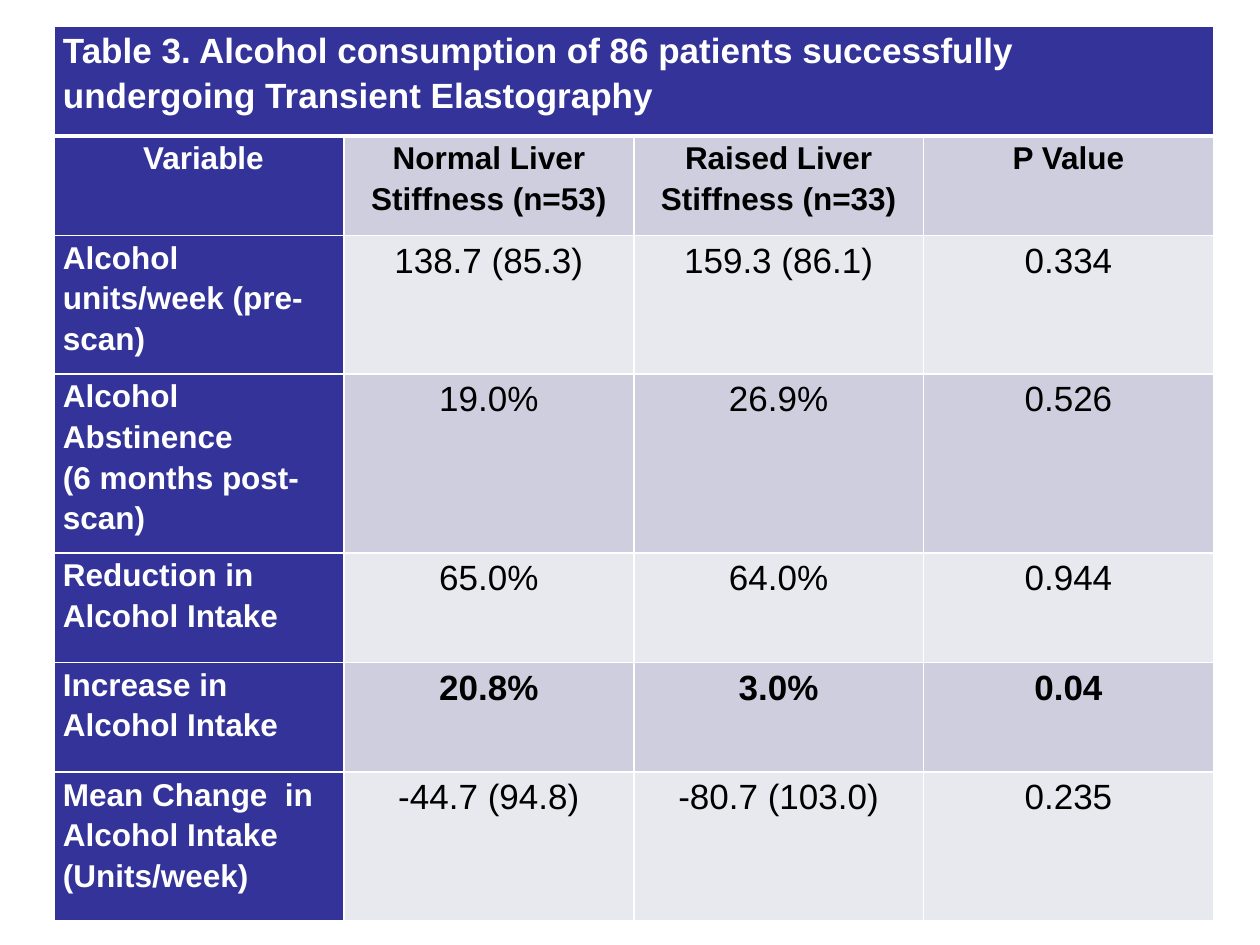
from dataclasses import dataclass

from lxml.etree import SubElement
from pptx import Presentation
from pptx.dml.color import RGBColor
from pptx.enum.text import PP_ALIGN
from pptx.oxml.ns import qn
from pptx.table import Table, _Cell
from pptx.util import Inches, Pt

NAVY, LAVENDER, PALE = "333399", "CECEDE", "E8E8EF"
WHITE, BLACK = "FFFFFF", "000000"
COLUMN_WIDTH = 2.3
TITLE_HEIGHT, HEADER_HEIGHT = 0.87, 0.79
TITLE = "Table 3. Alcohol consumption of 86 patients successfully undergoing Transient Elastography"
HEADERS = [" Variable", "Normal Liver Stiffness (n=53)", "Raised Liver Stiffness (n=33)", "P Value"]


@dataclass
class Measure:
    label: str
    values: tuple[str, str, str]
    height: float
    significant: bool = False


MEASURES = [
    Measure("Alcohol units/week (pre-scan)", ("138.7 (85.3)", "159.3 (86.1)", "0.334"), 1.1),
    Measure("Alcohol Abstinence\n(6 months post-scan)", ("19.0%", "26.9%", "0.526"), 1.42),
    Measure("Reduction in Alcohol Intake", ("65.0%", "64.0%", "0.944"), 0.87),
    Measure("Increase in Alcohol Intake", ("20.8%", "3.0%", "0.04"), 0.87, significant=True),
    Measure("Mean Change  in Alcohol Intake (Units/week)", ("-44.7 (94.8)", "-80.7 (103.0)", "0.235"), 1.18),
]


def color(value: str) -> RGBColor:
    return RGBColor.from_string(value)


def set_borders(cell: _Cell, top: float = 1, bottom: float = 1) -> None:
    """Draw white borders; call before the fill, which must follow them in the XML."""
    properties = cell._tc.get_or_add_tcPr()
    for tag, width in (("a:lnL", 1), ("a:lnR", 1), ("a:lnT", top), ("a:lnB", bottom)):
        line = SubElement(properties, qn(tag), w=str(Pt(width)))
        SubElement(SubElement(line, qn("a:solidFill")), qn("a:srgbClr"), val=WHITE)


def write_cell(cell: _Cell, text: str, *, fill: str, font_color: str = BLACK, size: int = 18,
               bold: bool = True, align: PP_ALIGN = PP_ALIGN.CENTER) -> None:
    cell.margin_left = cell.margin_right = Inches(0.07)
    cell.margin_top = cell.margin_bottom = 0
    cell.fill.solid()
    cell.fill.fore_color.rgb = color(fill)
    cell.text_frame.text = text
    for paragraph in cell.text_frame.paragraphs:
        paragraph.alignment = align
        paragraph.line_spacing = 1.15
        for run in paragraph.runs:
            run.font.name = "Arial"
            run.font.size = Pt(size)
            run.font.bold = bold
            run.font.color.rgb = color(font_color)


def fill_table(table: Table) -> None:
    for column in table.columns:
        column.width = Inches(COLUMN_WIDTH)
    heights = [TITLE_HEIGHT, HEADER_HEIGHT] + [measure.height for measure in MEASURES]
    for index, (row, height) in enumerate(zip(table.rows, heights)):
        row.height = Inches(height)
        for cell in row.cells:
            set_borders(cell, top=3 if index == 1 else 1, bottom=3 if index == 0 else 1)

    table.cell(0, 0).merge(table.cell(0, len(HEADERS) - 1))
    write_cell(table.cell(0, 0), TITLE, fill=NAVY, font_color=WHITE, size=20, align=PP_ALIGN.LEFT)

    for index, header in enumerate(HEADERS):
        write_cell(table.cell(1, index), header, fill=LAVENDER if index else NAVY,
                   font_color=BLACK if index else WHITE)

    for row_index, measure in enumerate(MEASURES, start=2):
        write_cell(table.cell(row_index, 0), measure.label, fill=NAVY, font_color=WHITE,
                   align=PP_ALIGN.LEFT)
        for column_index, value in enumerate(measure.values, start=1):
            write_cell(table.cell(row_index, column_index), value, size=20,
                       fill=LAVENDER if row_index % 2 else PALE, bold=measure.significant)


def main() -> None:
    presentation = Presentation()
    presentation.slide_width, presentation.slide_height = Inches(10), Inches(7.5)
    slide = presentation.slides.add_slide(presentation.slide_layouts[6])
    frame = slide.shapes.add_table(len(MEASURES) + 2, len(HEADERS), Inches(0.43), Inches(0.21),
                                   Inches(COLUMN_WIDTH * len(HEADERS)), Inches(7.09))
    fill_table(frame.table)
    presentation.save("out.pptx")


if __name__ == "__main__":
    main()
